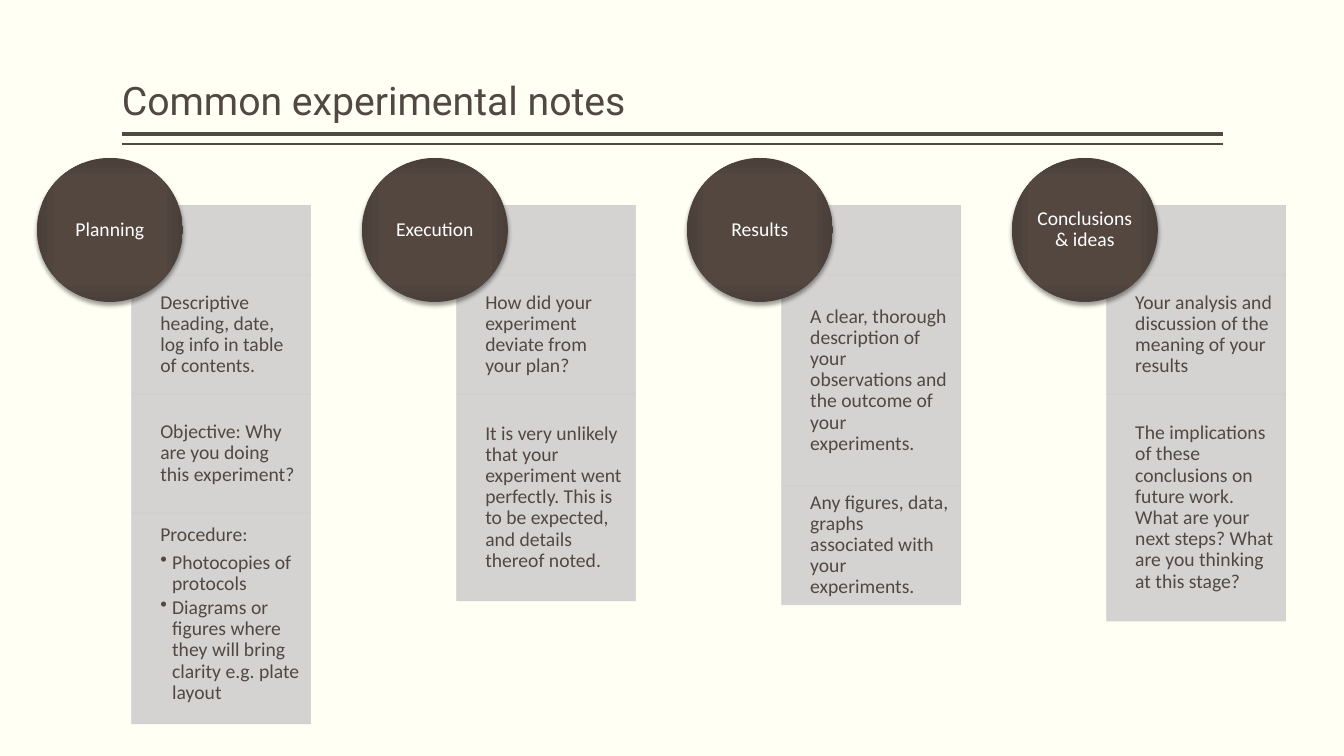
from dataclasses import dataclass

from lxml import etree
from pptx import Presentation
from pptx.dml.color import RGBColor
from pptx.enum.shapes import MSO_CONNECTOR, MSO_SHAPE
from pptx.enum.text import MSO_ANCHOR, PP_ALIGN
from pptx.oxml import parse_xml
from pptx.oxml.ns import nsdecls, qn
from pptx.util import Cm, Pt

LINE = MSO_CONNECTOR.STRAIGHT
RECT, OVAL = MSO_SHAPE.RECTANGLE, MSO_SHAPE.OVAL
TOP, MIDDLE, BOTTOM = MSO_ANCHOR.TOP, MSO_ANCHOR.MIDDLE, MSO_ANCHOR.BOTTOM
LEFT, CENTER = PP_ALIGN.LEFT, PP_ALIGN.CENTER


@dataclass(frozen=True)
class Theme:
    paper: str = "FFFFF3"
    ink: str = "514843"
    panel: str = "D0CFCF"
    white: str = "FFFFFF"
    glow: tuple = ((0, "544740"), (71, "534740"), (100, "4A3F39"))
    head: str = "Roboto"
    body: str = "Calibri"
    big: float = 28
    small: float = 14


THEME = Theme()

# Each column: heading, then cells of height (cm), text and bullets
COLUMNS = [
    ("Planning", [
        (3, "Descriptive heading, date, log info in table of contents.", []),
        (3, "Objective: Why are you doing this experiment?", []),
        (5.31, "Procedure:", [
            "Photocopies of protocols",
            "Diagrams or figures where they will bring clarity e.g. plate layout",
        ]),
    ]),
    ("Execution", [
        (3, "How did your experiment deviate from your plan?", []),
        (5.21, "It is very unlikely that your experiment went perfectly. "
               "This is to be expected, and details thereof noted.", []),
    ]),
    ("Results", [
        (5.31, "A clear, thorough description of your observations "
               "and the outcome of your experiments.", []),
        (3, "Any figures, data, graphs associated with your experiments.", []),
    ]),
    ("Conclusions & ideas", [
        (3, "Your analysis and discussion of the meaning of your results", []),
        (5.72, "The implications of these conclusions on future work. What are "
               "your next steps? What are you thinking at this stage?", []),
    ]),
]


def rgb(code):
    return RGBColor.from_string(code)


def set_frame(frame, anchor, left=0, top=0, right=0):
    frame.word_wrap = True
    frame.vertical_anchor = anchor
    frame.margin_left, frame.margin_right = Cm(left), Cm(right)
    frame.margin_top = frame.margin_bottom = Cm(top)


def set_text(para, text, color, face=THEME.body, size=THEME.small,
             align=LEFT, after=5):
    para.text = text
    para.alignment = align
    para.line_spacing = 0.9
    para.space_after = Pt(after)
    para.font.name, para.font.size = face, Pt(size)
    para.font.color.rgb = rgb(color)


def add_bullet(para):
    props = para._p.get_or_add_pPr()
    props.set("lvl", "1")
    props.set("marL", str(Cm(0.3)))
    props.set("indent", str(-Cm(0.3)))
    etree.SubElement(props, qn("a:buChar")).set("char", "•")


def add_title(slide, x, y, w, h):
    title = slide.shapes.title
    title.left, title.top, title.width, title.height = Cm(x), Cm(y), Cm(w), Cm(h)
    set_frame(title.text_frame, BOTTOM, top=0.13)
    set_text(title.text_frame.paragraphs[0], "Common experimental notes",
             THEME.ink, THEME.head, THEME.big, after=0)
    # Double rule under the title
    for gap, weight in ((0.13, 3), (0.38, 1)):
        level = Cm(y + h + gap)
        rule = slide.shapes.add_connector(LINE, Cm(x), level, Cm(x + w), level)
        rule.line.color.rgb = rgb(THEME.ink)
        rule.line.width = Pt(weight)
        etree.SubElement(rule._element.spPr, qn("a:effectLst"))


def add_panel(slide, x, y, w, h):
    panel = slide.shapes.add_shape(RECT, Cm(x), Cm(y), Cm(w), Cm(h))
    panel.shadow.inherit = False
    panel.fill.solid()
    panel.fill.fore_color.rgb = panel.line.color.rgb = rgb(THEME.panel)
    panel.line.width = Pt(0.5)
    for color in panel._element.spPr.iter(qn("a:srgbClr")):
        etree.SubElement(color, qn("a:alpha")).set("val", "90000")
    return panel


def add_cell(slide, x, y, w, h, text, bullets):
    frame = add_panel(slide, x, y, w, h).text_frame
    set_frame(frame, TOP if bullets else MIDDLE, 0.72, 0.28, 0.28)
    set_text(frame.paragraphs[0], text, THEME.ink)
    for item in bullets:
        para = frame.add_paragraph()
        add_bullet(para)
        set_text(para, item, THEME.ink, after=2)


def add_badge(slide, x, y, w, h, text):
    badge = slide.shapes.add_shape(OVAL, Cm(x), Cm(y), Cm(w), Cm(h))
    badge.line.fill.background()
    badge.shadow.inherit = False
    props = badge._element.spPr
    # Glow from the middle
    stops = "".join(
        f'<a:gs pos="{pos * 1000}"><a:srgbClr val="{color}"/></a:gs>'
        for pos, color in THEME.glow)
    props.insert(2, parse_xml(
        f'<a:gradFill {nsdecls("a")}><a:gsLst>{stops}</a:gsLst>'
        '<a:path path="rect"><a:fillToRect l="50000" t="50000" r="50000" '
        'b="50000"/></a:path></a:gradFill>'))
    # Soft shadow below
    props.find(qn("a:effectLst")).append(parse_xml(
        f'<a:outerShdw {nsdecls("a")} blurRad="{Pt(3.1)}" dist="{Pt(2)}" '
        'dir="5400000" rotWithShape="0"><a:srgbClr val="000000">'
        '<a:alpha val="38000"/></a:srgbClr></a:outerShdw>'))
    set_frame(badge.text_frame, MIDDLE)
    set_text(badge.text_frame.paragraphs[0], text, THEME.white, align=CENTER)


def add_column(slide, x, y, w, head, cells):
    wide, inset, drop, cap = 4.51, w - 4.51, 1.2, 1.75
    level = y + drop
    add_panel(slide, x + inset, level, wide, cap)
    level += cap
    for tall, text, bullets in cells:
        add_cell(slide, x + inset, level, wide, tall, text, bullets)
        level += tall
    add_badge(slide, x, y, 3.68, 3.63, head)


def main():
    deck = Presentation()
    deck.slide_width, deck.slide_height = Cm(33.87), Cm(19.05)
    slide = deck.slides.add_slide(deck.slide_layouts[5])
    slide.background.fill.solid()
    slide.background.fill.fore_color.rgb = rgb(THEME.paper)
    add_title(slide, 3.07, 0.2, 27.74, 3.05)
    for place, (head, cells) in enumerate(COLUMNS):
        add_column(slide, 0.93 + place * 8.19, 3.98, 6.9, head, cells)
    deck.save("out.pptx")


if __name__ == "__main__":
    main()
